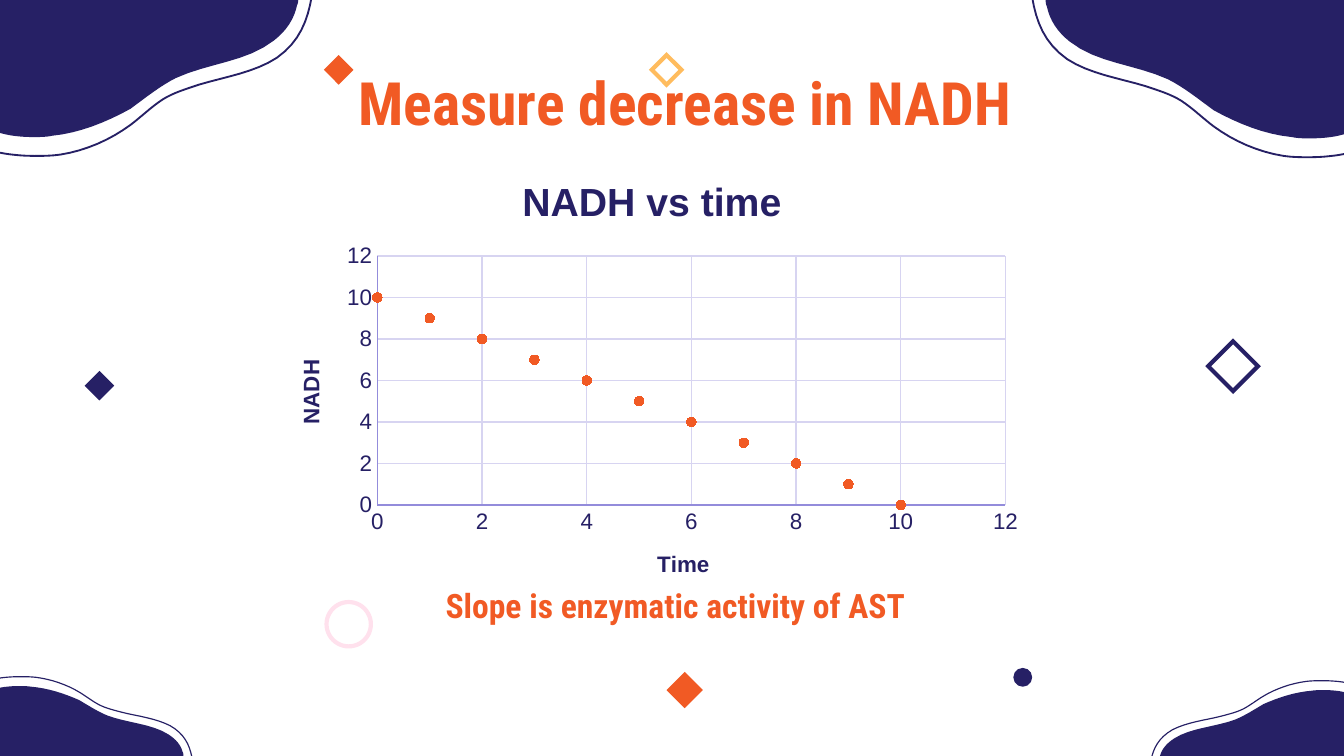
from lxml.etree import SubElement
from pptx import Presentation
from pptx.chart.data import XyChartData
from pptx.dml.color import RGBColor
from pptx.enum.chart import XL_CHART_TYPE, XL_MARKER_STYLE, XL_TICK_MARK
from pptx.enum.shapes import MSO_SHAPE
from pptx.enum.text import MSO_ANCHOR, PP_ALIGN
from pptx.oxml.ns import qn
from pptx.util import Inches, Pt

NAVY, ORANGE, AMBER, PINK = "262065", "F15A24", "FFBC5E", "FFE1ED"
rgb = RGBColor.from_string

# Widescreen 16:9 slide
prs = Presentation()
prs.slide_width = Inches(10)
prs.slide_height = Inches(10 * 9 / 16)
s = prs.slides.add_slide(prs.slide_layouts[6])


def style(sp, fill=None, line=None, width=2.25):
    sp.shadow.inherit = False
    if fill:
        sp.fill.solid()
        sp.fill.fore_color.rgb = rgb(fill)
    else:
        sp.fill.background()
    if line:
        sp.line.color.rgb = rgb(line)
        sp.line.width = Pt(width)
        SubElement(sp.line._get_or_add_ln(), qn("a:miter")).set("lim", "800000")
    else:
        sp.line.fill.background()


def add_curve(start, curves, corner, close):
    """Draw a chain of Bezier curves measured from a slide corner."""
    left, top, sx, sy = corner
    pts, p0 = [(0, 0), start] if close else [start], start
    for p1, p2, p3 in curves:
        for t in (i / 8 for i in range(1, 9)):
            pts.append(tuple((1 - t) ** 3 * a + 3 * t * (1 - t) ** 2 * b
                             + 3 * t * t * (1 - t) * c + t ** 3 * d
                             for a, b, c, d in zip(p0, p1, p2, p3)))
        p0 = p3
    pts = [(Inches(left + x * sx), Inches(top + y * sy)) for x, y in pts]
    fb = s.shapes.build_freeform(*pts[0])
    fb.add_line_segments(pts[1:], close=close)
    return fb.convert_to_shape()


# Small diamonds and circles
ornaments = [
    (MSO_SHAPE.DIAMOND, 4.85, 0.41, 0.22, None, AMBER),
    (MSO_SHAPE.DIAMOND, 2.41, 0.41, 0.22, ORANGE, None),
    (MSO_SHAPE.OVAL, 7.54, 4.97, 0.14, NAVY, None),
    (MSO_SHAPE.OVAL, 2.43, 4.48, 0.33, None, PINK),
    (MSO_SHAPE.DIAMOND, 0.63, 2.76, 0.22, NAVY, None),
    (MSO_SHAPE.DIAMOND, 8.99, 2.54, 0.37, None, NAVY),
    (MSO_SHAPE.DIAMOND, 4.96, 5, 0.27, ORANGE, None),
]
for kind, left, top, size, fill, line in ornaments:
    sp = s.shapes.add_shape(kind, Inches(left), Inches(top), Inches(size), Inches(size))
    style(sp, fill, line)

# Corner waves: one blob and one outline, mirrored and scaled
blob = [
    ((0.09, 1.04), (0.18, 1.05), (0.28, 1.05)),
    ((0.33, 1.05), (0.37, 1.05), (0.42, 1.04)),
    ((0.62, 1.02), (0.82, 0.94), (1, 0.84)),
    ((1.11, 0.76), (1.22, 0.67), (1.34, 0.61)),
    ((1.58, 0.5), (1.87, 0.49), (2.07, 0.33)),
    ((2.16, 0.26), (2.22, 0.17), (2.24, 0.07)),
    ((2.25, 0.05), (2.25, 0.03), (2.25, 0)),
]
outline = [
    ((2.32, 0.18), (2.26, 0.34), (2.09, 0.46)),
    ((1.92, 0.57), (1.71, 0.6), (1.51, 0.66)),
    ((1.42, 0.69), (1.32, 0.72), (1.24, 0.77)),
    ((1.15, 0.83), (1.08, 0.9), (1, 0.96)),
    ((0.85, 1.07), (0.67, 1.15), (0.48, 1.18)),
    ((0.41, 1.19), (0.35, 1.19), (0.29, 1.19)),
    ((0.19, 1.19), (0.09, 1.18), (0, 1.16)),
]
corners = [(-0.03, -0.03, 1, 1), (10.02, 5.66, -0.62, -0.5),
           (-0.03, 5.63, 0.62, -0.5), (10.03, -0.02, -1, 1)]
for corner in corners:
    style(add_curve((0, 1.01), blob, corner, True), NAVY)
    style(add_curve((2.35, 0), outline, corner, False), None, NAVY, abs(corner[2]))

# Heading and conclusion
texts = [
    ("Slope is enzymatic activity of AST", 2.53, 4.25, 4.99, 0.99, 18, MSO_ANCHOR.TOP),
    ("Measure decrease in NADH ", 0.93, 0.53, 8.44, 0.45, 32, MSO_ANCHOR.MIDDLE),
]
for text, left, top, width, height, size, anchor in texts:
    sp = s.shapes.add_textbox(Inches(left), Inches(top), Inches(width), Inches(height))
    tf = sp.text_frame
    frame = {"word_wrap": True, "vertical_anchor": anchor}
    for side in ("left", "right", "top", "bottom"):
        frame["margin_" + side] = Inches(0.1)
    for name, value in frame.items():
        setattr(tf, name, value)
    p = tf.paragraphs[0]
    p.alignment = PP_ALIGN.CENTER
    r = p.add_run()
    r.text = text
    for name, value in {"name": "Roboto Condensed", "size": Pt(size), "bold": True}.items():
        setattr(r.font, name, value)
    r.font.color.rgb = rgb(ORANGE)

# Scatter chart
data = XyChartData()
points = data.add_series("Series 1")
for time in range(11):
    points.add_data_point(time, 10 - time)
chart = s.shapes.add_chart(XL_CHART_TYPE.XY_SCATTER, Inches(2.01), Inches(1.13),
                           Inches(5.7), Inches(3.37), data).chart
chart.has_legend = False
chart.font.name, chart.font.size = "Arial", Pt(12)
chart.font.color.rgb = rgb(NAVY)
plot = chart.plots[0]
plot.vary_by_categories = False
ser = plot.series[0]
ser.smooth = False
ser.format.line.fill.background()
ser.marker.style, ser.marker.size = XL_MARKER_STYLE.CIRCLE, 5
ser.marker.format.fill.solid()
ser.marker.format.fill.fore_color.rgb = rgb(ORANGE)
ser.marker.format.line.color.rgb = rgb(ORANGE)

# Axes
scale = {"minimum_scale": 0, "maximum_scale": 12, "major_unit": 2,
         "major_tick_mark": XL_TICK_MARK.NONE, "minor_tick_mark": XL_TICK_MARK.NONE,
         "has_major_gridlines": True, "has_title": True}
for axis in (chart.category_axis, chart.value_axis):
    for name, value in scale.items():
        setattr(axis, name, value)
    for part, color in ((axis, "938CDB"), (axis.major_gridlines, "D7D4F1")):
        part.format.line.color.rgb = rgb(color)
        part.format.line.width = Pt(0.75)

# Chart and axis titles
chart.has_title = True
x_title, y_title = chart.category_axis.axis_title, chart.value_axis.axis_title
for title, text, size in ((chart.chart_title, "NADH vs time", 21),
                          (x_title, "Time", 12), (y_title, "NADH", 12)):
    r = title.text_frame.paragraphs[0].add_run()
    r.text = text
    for name, value in {"name": "Arial", "size": Pt(size), "bold": True}.items():
        setattr(r.font, name, value)
    r.font.color.rgb = rgb(NAVY)
body = y_title.text_frame._txBody.find(qn("a:bodyPr"))
body.set("rot", "-5400000")
body.set("vert", "horz")

# Fixed places for the plot area and the titles, as shares of the chart
plot_area = chart._chartSpace.chart.plotArea
places = [
    (plot_area, 0, {"layoutTarget": "inner", "xMode": "edge", "yMode": "edge",
                    "x": 0.14, "y": 0.23, "w": 0.82, "h": 0.55}),
    (chart.chart_title._element, 1, {"xMode": "edge", "yMode": "edge", "x": 0.32, "y": 0.04}),
    (x_title._element, 1, {"xMode": "edge", "yMode": "edge", "x": 0.5, "y": 0.87}),
    (y_title._element, 1, {"xMode": "edge", "yMode": "edge", "x": 0.03, "y": 0.45}),
]
for element, index, values in places:
    for old in element.findall(qn("c:layout")):
        element.remove(old)
    layout = element.makeelement(qn("c:layout"), {})
    element.insert(index, layout)
    manual = SubElement(layout, qn("c:manualLayout"))
    for name, value in values.items():
        SubElement(manual, qn("c:" + name)).set("val", str(value))

prs.save("out.pptx")
